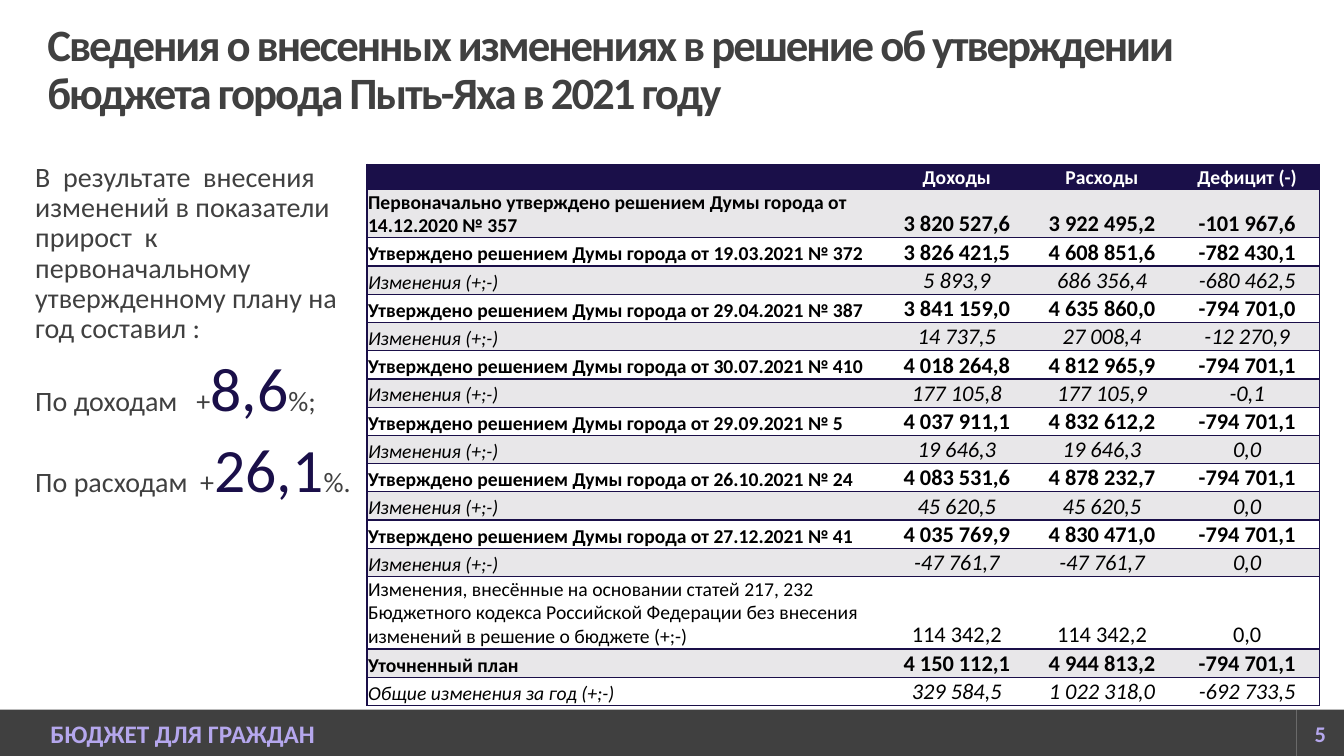
from dataclasses import dataclass

from lxml.etree import SubElement
from pptx import Presentation
from pptx.dml.color import RGBColor as Color
from pptx.enum.shapes import MSO_SHAPE as Shape
from pptx.enum.text import MSO_ANCHOR as Anchor, PP_ALIGN as Align
from pptx.oxml.ns import qn
from pptx.util import Inches, Pt


@dataclass(frozen=True)
class Theme:
    font: str = "Calibri"
    dark: str = "404040"
    navy: str = "1A0F49"
    lilac: str = "B5A7ED"
    band: str = "E8E7E9"
    white: str = "FFFFFF"
    black: str = "000000"
    title: int = 32
    body: int = 20
    accent: int = 44
    footer: int = 18
    number: int = 16
    label: int = 14


BOLD, ITALIC, PLAIN = "bold", "italic", "plain"
CHANGES = "Изменения (+;-)"
APPROVED = "Утверждено решением Думы города от "
HEADER = ("", "Доходы", "Расходы", "Дефицит (-)")
ROWS = [
    (BOLD, "Первоначально утверждено решением Думы города от 14.12.2020 № 357",
     "3 820 527,6", "3 922 495,2", "-101 967,6"),
    (BOLD, APPROVED + "19.03.2021 № 372", "3 826 421,5", "4 608 851,6", "-782 430,1"),
    (ITALIC, CHANGES, "5 893,9", "686 356,4", "-680 462,5"),
    (BOLD, APPROVED + "29.04.2021 № 387", "3 841 159,0", "4 635 860,0", "-794 701,0"),
    (ITALIC, CHANGES, "14 737,5", "27 008,4", "-12 270,9"),
    (BOLD, APPROVED + "30.07.2021 № 410", "4 018 264,8", "4 812 965,9", "-794 701,1"),
    (ITALIC, CHANGES, "177 105,8", "177 105,9", "-0,1"),
    (BOLD, APPROVED + "29.09.2021 № 5", "4 037 911,1", "4 832 612,2", "-794 701,1"),
    (ITALIC, CHANGES, "19 646,3", "19 646,3", "0,0"),
    (BOLD, APPROVED + "26.10.2021 № 24", "4 083 531,6", "4 878 232,7", "-794 701,1"),
    (ITALIC, CHANGES, "45 620,5", "45 620,5", "0,0"),
    (BOLD, APPROVED + "27.12.2021 № 41", "4 035 769,9", "4 830 471,0", "-794 701,1"),
    (ITALIC, CHANGES, "-47 761,7", "-47 761,7", "0,0"),
    (PLAIN, "Изменения, внесённые на основании статей 217, 232 Бюджетного кодекса "
     "Российской Федерации без внесения изменений в решение о бюджете (+;-)",
     "114 342,2", "114 342,2", "0,0"),
    (BOLD, "Уточненный план", "4 150 112,1", "4 944 813,2", "-794 701,1"),
    (ITALIC, "Общие изменения за год (+;-)", "329 584,5", "1 022 318,0", "-692 733,5"),
]
COLUMN_WIDTHS = [5.13, 1.44, 1.44, 1.44]
ROW_HEIGHT = 0.28
TALL_ROWS = {0: 0.25, 1: 0.48, 14: 0.72}


class BudgetPage:
    """Draws the parts of one budget page in a shared theme."""

    def __init__(self, page, theme):
        self.page = page
        self.theme = theme

    def style(self, font, size, color, weight=PLAIN):
        font.name = self.theme.font
        font.size = Pt(size)
        font.color.rgb = Color.from_string(color)
        font.bold = weight == BOLD
        font.italic = weight == ITALIC

    def clear_margins(self, frame):
        frame.margin_left = frame.margin_top = frame.margin_right = frame.margin_bottom = 0
        frame.word_wrap = True

    def text_box(self, left, top, width, height, anchor):
        box = self.page.shapes.add_textbox(
            Inches(left), Inches(top), Inches(width), Inches(height))
        self.clear_margins(box.text_frame)
        box.text_frame.vertical_anchor = anchor
        return box.text_frame

    def title(self, text):
        para = self.text_box(0.47, 0.47, 12.39, 0.47, Anchor.MIDDLE).paragraphs[0]
        para.line_spacing = 0.9
        span = para.add_run()
        span.text = text
        self.style(span.font, self.theme.title, self.theme.dark, BOLD)
        span.font._element.set("spc", "-150")

    def summary(self, intro, growths):
        frame = self.text_box(0.35, 1.62, 3.17, 0.39, Anchor.TOP)
        paragraphs = [(intro, "", "")] + growths
        for index, (lead, accent, tail) in enumerate(paragraphs):
            para = frame.add_paragraph() if index else frame.paragraphs[0]
            para.line_spacing = 0.9
            para.space_before = Pt(10)
            self.style(para.font, self.theme.body, self.theme.dark)
            for text in filter(None, (lead, accent, tail)):
                span = para.add_run()
                span.text = text
                if text == accent:
                    self.style(span.font, self.theme.accent, self.theme.navy)
                else:
                    self.style(span.font, self.theme.body, self.theme.dark)

    def footer_block(self, left, width, text, size, align, indent=0):
        block = self.page.shapes.add_shape(
            Shape.RECTANGLE, Inches(left), Inches(7.04), Inches(width), Inches(0.47))
        block.shadow.inherit = False
        block.fill.solid()
        block.fill.fore_color.rgb = Color.from_string(self.theme.dark)
        block.line.fill.background()
        self.clear_margins(block.text_frame)
        block.text_frame.margin_left = Inches(indent)
        block.text_frame.vertical_anchor = Anchor.MIDDLE
        para = block.text_frame.paragraphs[0]
        para.text = text
        para.alignment = align
        self.style(para.font, size, self.theme.lilac, BOLD)

    def borders(self, cell, sides):
        properties = cell._tc.get_or_add_tcPr()
        for index, side in enumerate("LRTB"):
            line = SubElement(properties, qn(f"a:ln{side}"), w=str(Pt(1)))
            properties.insert(index, line)
            if side in sides:
                fill = SubElement(line, qn("a:solidFill"))
                SubElement(fill, qn("a:srgbClr"), val=self.theme.navy)
            else:
                SubElement(line, qn("a:noFill"))

    def cell(self, cell, text, fill, size, color, weight, align):
        cell.fill.solid()
        cell.fill.fore_color.rgb = Color.from_string(fill)
        cell.margin_left = cell.margin_top = cell.margin_right = Inches(0.01)
        cell.margin_bottom = 0
        cell.vertical_anchor = Anchor.BOTTOM
        para = cell.text_frame.paragraphs[0]
        para.text = text
        para.alignment = align
        self.style(para.font, size, color, weight)

    def table(self, header, rows):
        theme = self.theme
        heights = [TALL_ROWS.get(row, ROW_HEIGHT) for row in range(len(rows) + 1)]
        table = self.page.shapes.add_table(
            len(heights), len(header), Inches(3.64), Inches(1.63),
            Inches(sum(COLUMN_WIDTHS)), Inches(sum(heights))).table
        table.first_row = table.horz_banding = False
        for column, width in zip(table.columns, COLUMN_WIDTHS):
            column.width = Inches(width)
        for row, (weight, *texts) in enumerate([(BOLD, *header)] + rows):
            table.rows[row].height = Inches(heights[row])
            if row:
                fill, color = (theme.band if row % 2 else theme.white), theme.black
            else:
                fill, color = theme.navy, theme.white
            for column, text in enumerate(texts):
                cell = table.cell(row, column)
                size = theme.number if row and column else theme.label
                align = Align.CENTER if column else Align.LEFT
                self.cell(cell, text, fill, size, color, weight, align)
                outer = {0: "L", len(header) - 1: "R"}.get(column, "")
                self.borders(cell, "TB" + outer)


def main():
    deck = Presentation()
    deck.slide_width, deck.slide_height = Inches(13.33), Inches(7.5)
    theme = Theme()
    budget = BudgetPage(deck.slides.add_slide(deck.slide_layouts[6]), theme)
    budget.title("Сведения о внесенных изменениях в решение об утверждении "
                 "бюджета города Пыть-Яха в 2021 году")
    budget.footer_block(0, 12.86, "БЮДЖЕТ ДЛЯ ГРАЖДАН", theme.footer, Align.LEFT, 0.5)
    budget.footer_block(12.86, 0.47, "5", theme.number, Align.CENTER)
    budget.summary(
        "В  результате  внесения изменений в показатели прирост  к "
        "первоначальному утвержденному плану на год составил :",
        [("По доходам   +", "8,6", "%;"), ("По расходам  +", "26,1", "%.")])
    budget.table(HEADER, ROWS)
    deck.save("out.pptx")


if __name__ == "__main__":
    main()
